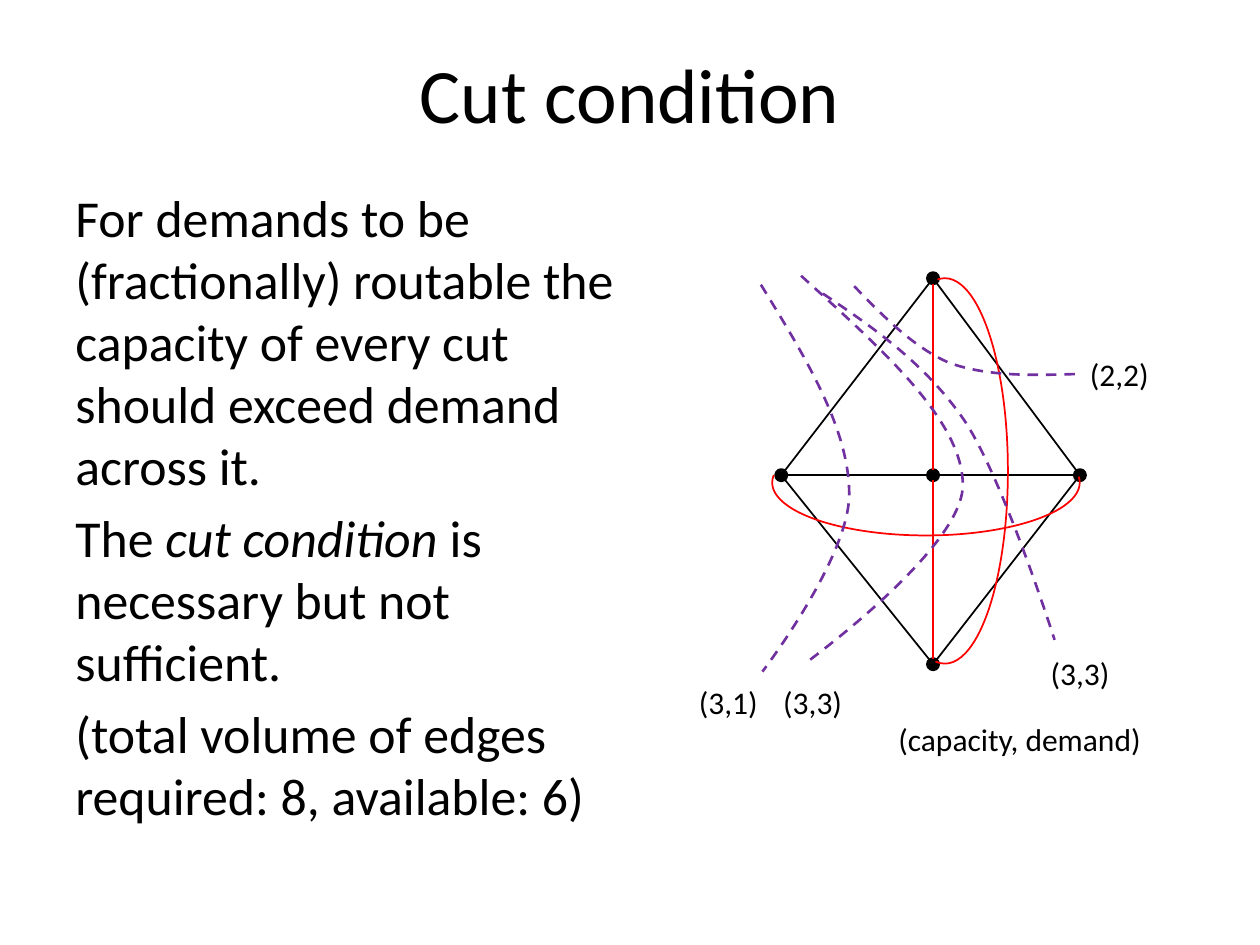
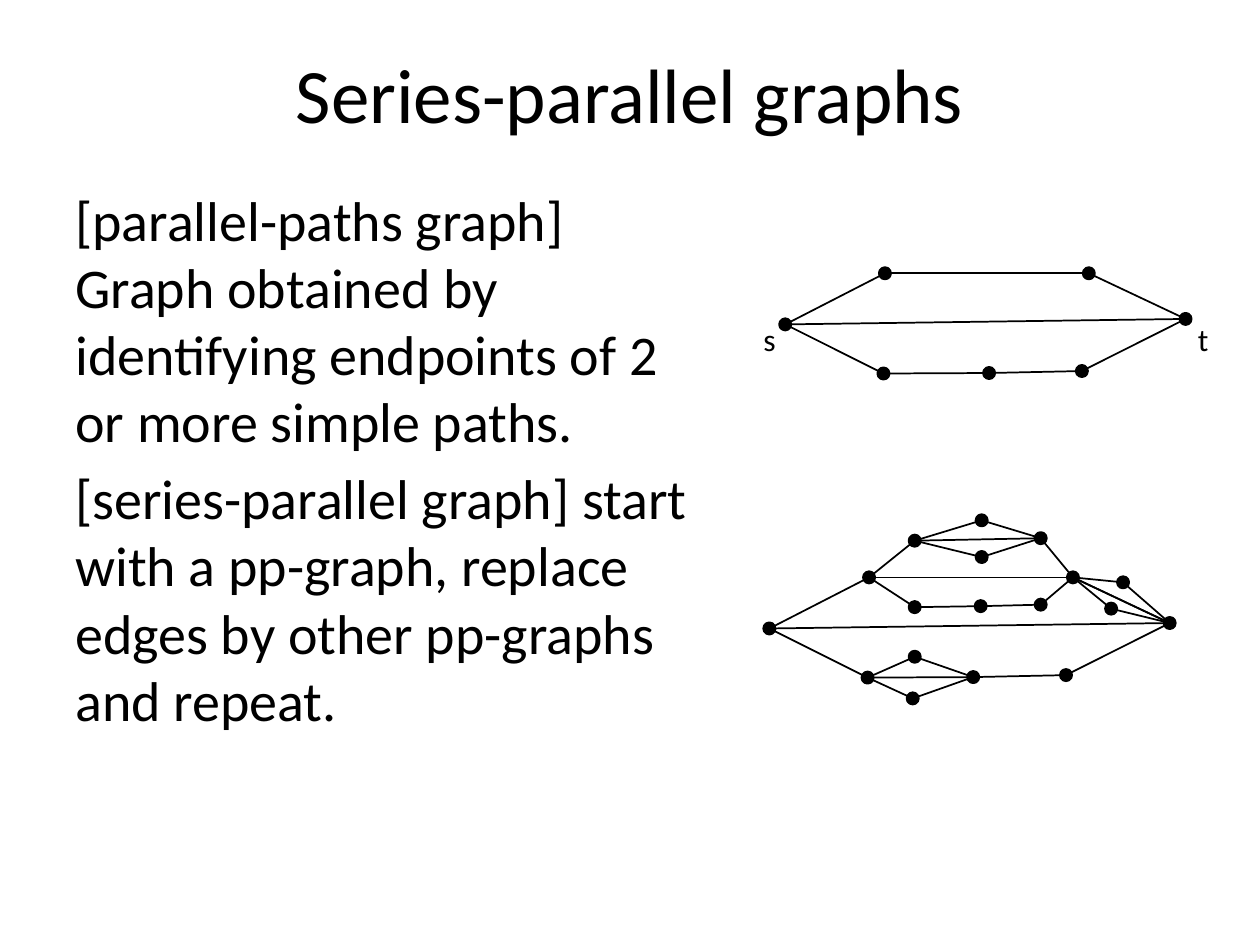
from dataclasses import dataclass
from itertools import pairwise
from math import hypot

from lxml import etree
from pptx import Presentation
from pptx.dml.color import RGBColor
from pptx.enum.dml import MSO_LINE
from pptx.enum.shapes import MSO_CONNECTOR, MSO_SHAPE
from pptx.enum.text import MSO_ANCHOR, MSO_AUTO_SIZE, PP_ALIGN
from pptx.oxml.ns import qn
from pptx.util import Cm, Pt

STRAIGHT = MSO_CONNECTOR.STRAIGHT
OVAL, ARC = MSO_SHAPE.OVAL, MSO_SHAPE.ARC
DASH = MSO_LINE.DASH
LEFT, CENTER = PP_ALIGN.LEFT, PP_ALIGN.CENTER
TOP, MIDDLE = MSO_ANCHOR.TOP, MSO_ANCHOR.MIDDLE
NO_AUTOFIT, GROW = MSO_AUTO_SIZE.NONE, MSO_AUTO_SIZE.SHAPE_TO_FIT_TEXT


@dataclass(frozen=True)
class Theme:
    font: str = "Calibri"
    ink: RGBColor = RGBColor(0x00, 0x00, 0x00)
    demand: RGBColor = RGBColor(0xFF, 0x00, 0x00)
    cut: RGBColor = RGBColor(0x70, 0x30, 0xA0)
    title_size: float = 44
    label_size: float = 18
    paragraph_gap: float = 5.5
    edge_width: float = 1
    cut_width: float = 1.5
    node_width: float = 2


THEME = Theme()
NODE_DIAMETER = 0.21
LABEL_HEIGHT = 1.02

# Node centres and label boxes are in centimetres.
CUT_NODES = {
    "top": (18.81, 5.61),
    "left": (15.75, 9.58),
    "middle": (18.81, 9.58),
    "right": (21.77, 9.58),
    "bottom": (18.81, 13.39),
}
CAPACITY_PATHS = [
    ("left", "top", "right", "bottom", "left"),
    ("left", "middle", "right"),
]
DEMAND_PATHS = [("top", "middle", "bottom")]
CUT_CURVES = [
    [(15.34, 5.74), (16.23, 7.19), (17.12, 8.64), (17.12, 9.96),
     (17.12, 11.25), (15.37, 13.54), (15.37, 13.54)],
    [(16.15, 5.56), (17.78, 7.04), (19.41, 8.48), (19.41, 9.78),
     (19.41, 11.07), (16.21, 13.39), (16.21, 13.39)],
    [(16.59, 5.92), (17.6, 6.6), (18.64, 7.32), (19.43, 8.46),
     (20.22, 9.63), (21.26, 12.9), (21.26, 12.9)],
    [(17.22, 5.77), (17.81, 6.38), (18.42, 7.01), (19.15, 7.32),
     (19.91, 7.59), (20.8, 7.57), (21.72, 7.54)],
]
CUT_LABELS = [
    ("(capacity, demand)", 17.86, 14.4, 5.46),
    ("(3,1)", 13.84, 13.64, 1.7),
    ("(3,3)", 15.54, 13.64, 1.7),
    ("(3,3)", 20.93, 13.06, 1.7),
    ("(2,2)", 21.72, 7.04, 1.7),
]

PARALLEL_NODES = {
    "s": (15.83, 6.54),
    "t": (23.9, 6.43),
    "upper left": (17.84, 5.51),
    "upper right": (21.95, 5.51),
    "lower left": (17.81, 7.53),
    "lower middle": (19.94, 7.52),
    "lower right": (21.81, 7.48),
}
PARALLEL_PATHS = [
    ("s", "upper left", "upper right", "t"),
    ("s", "t"),
    ("s", "lower left", "lower middle", "lower right", "t"),
]
SERIES_OFFSET = (-0.32, 6.13)
SERIES_NODES = {
    "roof left": (18.44, 10.9),
    "roof right": (20.98, 10.85),
    "roof top": (19.79, 10.49),
    "roof bottom": (19.79, 11.23),
    "floor left": (18.44, 12.24),
    "floor middle": (19.77, 12.22),
    "floor right": (20.98, 12.19),
    "slope top": (22.64, 11.74),
    "slope bottom": (22.4, 12.27),
    "base top": (18.44, 13.24),
    "base bottom": (18.4, 14.08),
}
SERIES_PATHS = [
    ("upper left", "roof left", "roof right", "upper right"),
    ("roof left", "roof top", "roof right"),
    ("roof left", "roof bottom", "roof right"),
    ("upper left", "floor left", "floor middle", "floor right", "upper right"),
    ("upper right", "slope top", "t"),
    ("upper right", "slope bottom", "t"),
    ("lower left", "base top", "lower middle"),
    ("lower left", "base bottom", "lower middle"),
]
PARALLEL_LABELS = [("s", 15.14, 6.32, 0.76), ("t", 23.9, 6.32, 0.71)]


def add_text(slide, paragraphs, box, size, align=LEFT, anchor=TOP, wrap=True, gap=0):
    """Each paragraph is a tuple of runs, alternately upright and italic."""
    frame = slide.shapes.add_textbox(*map(Cm, box)).text_frame
    frame.word_wrap = wrap
    frame.auto_size = NO_AUTOFIT if wrap else GROW
    frame.vertical_anchor = anchor
    for index, runs in enumerate(paragraphs):
        paragraph = frame.add_paragraph() if index else frame.paragraphs[0]
        paragraph.alignment = align
        paragraph.space_before = Pt(gap if index else 0)
        for position, text in enumerate(runs):
            run = paragraph.add_run()
            run.text = text
            run.font.name = THEME.font
            run.font.size = Pt(size)
            run.font.color.rgb = THEME.ink
            run.font.italic = position % 2 == 1


def add_title_and_body(slide, title, body, width, size):
    add_text(slide, [(title,)], (1.27, 0.76, 22.86, 2.21), THEME.title_size,
             align=CENTER, anchor=MIDDLE)
    add_text(slide, body, (1.27, 3.61, width, 13.9), size, gap=THEME.paragraph_gap)


def add_labels(slide, labels):
    for text, left, top, width in labels:
        add_text(slide, [(text,)], (left, top, width, LABEL_HEIGHT),
                 THEME.label_size, wrap=False)


def style_line(line, color, width):
    line.color.rgb = color
    line.width = Pt(width)


def add_edge(slide, start, end, color):
    """Join two node centres, stopping at the rims of the nodes."""
    (x1, y1), (x2, y2) = start, end
    share = NODE_DIAMETER / 2 / hypot(x2 - x1, y2 - y1)
    dx, dy = (x2 - x1) * share, (y2 - y1) * share
    ends = (x1 + dx, y1 + dy, x2 - dx, y2 - dy)
    edge = slide.shapes.add_connector(STRAIGHT, *map(Cm, ends))
    style_line(edge.line, color, THEME.edge_width)
    etree.SubElement(edge._element.spPr, qn("a:effectLst"))


def add_edges(slide, nodes, paths, color=THEME.ink):
    for nodes_on_path in paths:
        for start, end in pairwise(nodes_on_path):
            add_edge(slide, nodes[start], nodes[end], color)


def add_nodes(slide, nodes):
    for x, y in nodes.values():
        corner = Cm(x - NODE_DIAMETER / 2), Cm(y - NODE_DIAMETER / 2)
        node = slide.shapes.add_shape(OVAL, *corner, Cm(NODE_DIAMETER), Cm(NODE_DIAMETER))
        node.shadow.inherit = False
        node.fill.solid()
        node.fill.fore_color.rgb = THEME.ink
        style_line(node.line, THEME.ink, THEME.node_width)


def add_demand_arc(slide, box, rotation=0):
    arc = slide.shapes.add_shape(ARC, *map(Cm, box))
    arc.adjustments[0] = 160.653
    arc.adjustments[1] = 55.7
    arc.rotation = rotation
    arc.shadow.inherit = False
    arc.fill.background()
    style_line(arc.line, THEME.demand, THEME.edge_width)


def add_cut_curve(slide, points):
    """Draw a Bezier curve: a start, then two controls and an end per segment."""
    start, *others = [(Cm(x), Cm(y)) for x, y in points]
    builder = slide.shapes.build_freeform(*start)
    builder.add_line_segments(others, close=False)
    curve = builder.convert_to_shape()
    steps = list(curve._element.iter(qn("a:lnTo")))
    for first in range(0, len(steps), 3):
        segment = etree.Element(qn("a:cubicBezTo"))
        steps[first].addprevious(segment)
        for step in steps[first:first + 3]:
            segment.append(step[0])
            step.getparent().remove(step)
    curve.shadow.inherit = False
    curve.fill.background()
    style_line(curve.line, THEME.cut, THEME.cut_width)
    curve.line.dash_style = DASH


def build_cut_condition(slide):
    body = [
        ("For demands to be (fractionally) routable the capacity of every cut "
         "should exceed demand across it.",),
        ("The ", "cut condition ", "is necessary but not sufficient."),
        ("(total volume of edges required: 8, available: 6)",),
    ]
    add_title_and_body(slide, "Cut condition", body, width=11.43, size=29.6)
    add_nodes(slide, CUT_NODES)
    add_edges(slide, CUT_NODES, CAPACITY_PATHS)
    add_edges(slide, CUT_NODES, DEMAND_PATHS, THEME.demand)
    add_demand_arc(slide, (17.78, 5.61, 2.54, 7.77))
    add_demand_arc(slide, (17.6, 6.63, 2.13, 6.2), rotation=90)
    for points in CUT_CURVES:
        add_cut_curve(slide, points)
    add_labels(slide, CUT_LABELS)


def build_series_parallel(slide):
    body = [
        ("[parallel-paths graph] Graph obtained by identifying endpoints of 2 "
         "or more simple paths.",),
        ("[series-parallel graph] start with a pp-graph, replace edges by other "
         "pp-graphs and repeat.",),
    ]
    add_title_and_body(slide, "Series-parallel graphs", body, width=13.34, size=32)
    add_nodes(slide, PARALLEL_NODES)
    add_edges(slide, PARALLEL_NODES, PARALLEL_PATHS)
    add_labels(slide, PARALLEL_LABELS)

    dx, dy = SERIES_OFFSET
    moved = {name: (x + dx, y + dy) for name, (x, y) in PARALLEL_NODES.items()}
    series_nodes = moved | SERIES_NODES
    add_nodes(slide, series_nodes)
    add_edges(slide, series_nodes, PARALLEL_PATHS + SERIES_PATHS + [("upper right", "t")])


def main():
    presentation = Presentation()
    presentation.slide_width, presentation.slide_height = Cm(25.4), Cm(19.05)
    blank = presentation.slide_layouts[6]
    for build in (build_cut_condition, build_series_parallel):
        build(presentation.slides.add_slide(blank))
    presentation.save("out.pptx")


if __name__ == "__main__":
    main()
